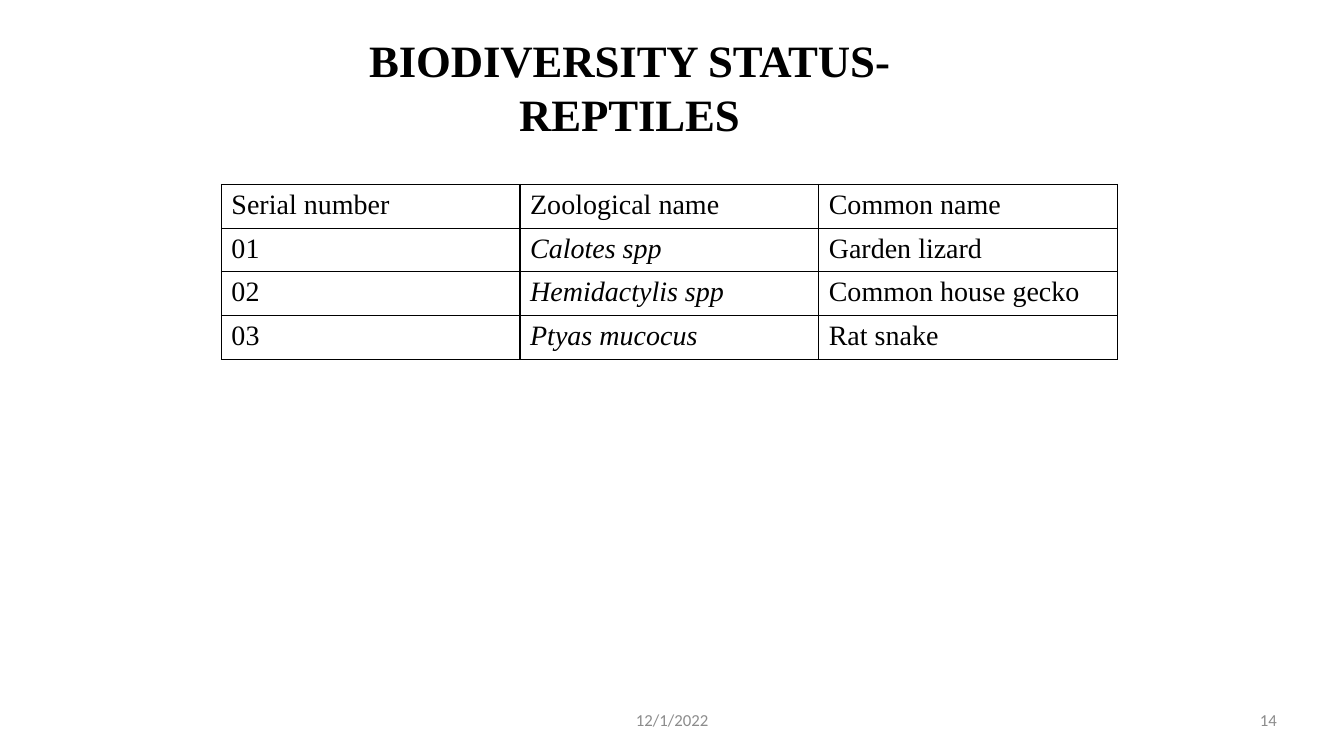
from dataclasses import dataclass

from lxml import etree
from pptx import Presentation
from pptx.dml.color import RGBColor
from pptx.enum import text as tx
from pptx.oxml import ns
from pptx.util import Cm, Pt


@dataclass(frozen=True)
class Theme:
    ink: str = "000000"
    muted: str = "8C8C8C"
    serif: str = "Times New Roman"
    sans: str = "Calibri"
    title: int = 32
    body: int = 20
    footer: int = 12
    border: int = 1


THEME = Theme()
HEADINGS = ("Serial number", "Zoological name", "Common name")
REPTILES = (
    ("Calotes spp", "Garden lizard"),
    ("Hemidactylis spp", "Common house gecko"),
    ("Ptyas mucocus", "Rat snake"),
)


def write(frame, wording, *, size=THEME.body, font=THEME.serif, color=THEME.ink,
          bold=False, italic=False, align=tx.PP_ALIGN.LEFT, before=0,
          line=None, tracking=None):
    paragraph = frame.paragraphs[0]
    paragraph.alignment = align
    paragraph.space_before = Pt(before)
    if line:
        paragraph.line_spacing = Pt(line)
    run = paragraph.add_run()
    run.text = wording
    run.font.size = Pt(size)
    run.font.name = font
    run.font.bold = bold
    run.font.italic = italic
    run.font.color.rgb = RGBColor.from_string(color)
    if tracking:
        run.font._element.set("spc", str(round(tracking * 100)))


def prepare_frame(frame):
    frame.word_wrap = True
    frame.auto_size = tx.MSO_AUTO_SIZE.NONE
    frame.vertical_anchor = tx.MSO_ANCHOR.MIDDLE
    frame.margin_left = frame.margin_right = 0
    frame.margin_top = frame.margin_bottom = 0
    return frame


def place_title(slide, wording):
    title = slide.shapes.title
    title.left, title.top = Cm(7.52), Cm(0.79)
    title.width, title.height = Cm(16.69), Cm(2.77)
    write(prepare_frame(title.text_frame), wording, size=THEME.title, bold=True,
          align=tx.PP_ALIGN.CENTER, before=1, tracking=-0.1)


def add_footer(slide, wording, left, width, align):
    footer = slide.shapes.add_textbox(Cm(left), Cm(17.96), Cm(width), Cm(0.43))
    write(prepare_frame(footer.text_frame), wording, size=THEME.footer,
          font=THEME.sans, color=THEME.muted, align=align, line=12.4)


def outline_cell(cell):
    properties = cell._tc.get_or_add_tcPr()
    for position, side in enumerate(("a:lnL", "a:lnR", "a:lnT", "a:lnB")):
        border = etree.Element(ns.qn(side), w=str(Pt(THEME.border)))
        fill = etree.SubElement(border, ns.qn("a:solidFill"))
        etree.SubElement(fill, ns.qn("a:srgbClr"), val=THEME.ink)
        properties.insert(position, border)


def add_species_table(slide, headings, species):
    records = [headings] + [
        (f"{serial:02}", *names) for serial, names in enumerate(species, 1)
    ]
    table = slide.shapes.add_table(
        len(records), len(headings), Cm(5.58), Cm(4.65),
        Cm(22.58), Cm(1.1 * len(records))).table
    table.first_row = table.horz_banding = False
    for row, record in enumerate(records):
        for column, wording in enumerate(record):
            cell = table.cell(row, column)
            cell.fill.background()
            outline_cell(cell)
            write(cell.text_frame, wording, italic=row > 0 and column == 1)


def main():
    deck = Presentation()
    deck.slide_width, deck.slide_height = Cm(33.87), Cm(19.05)
    slide = deck.slides.add_slide(deck.slide_layouts.get_by_name("Title Only"))
    place_title(slide, "BIODIVERSITY STATUS- REPTILES")
    add_footer(slide, "12/1/2022", 11.58, 10.72, tx.PP_ALIGN.CENTER)
    add_footer(slide, "14", 24.28, 7.9, tx.PP_ALIGN.RIGHT)
    add_species_table(slide, HEADINGS, REPTILES)
    deck.save("out.pptx")


if __name__ == "__main__":
    main()
